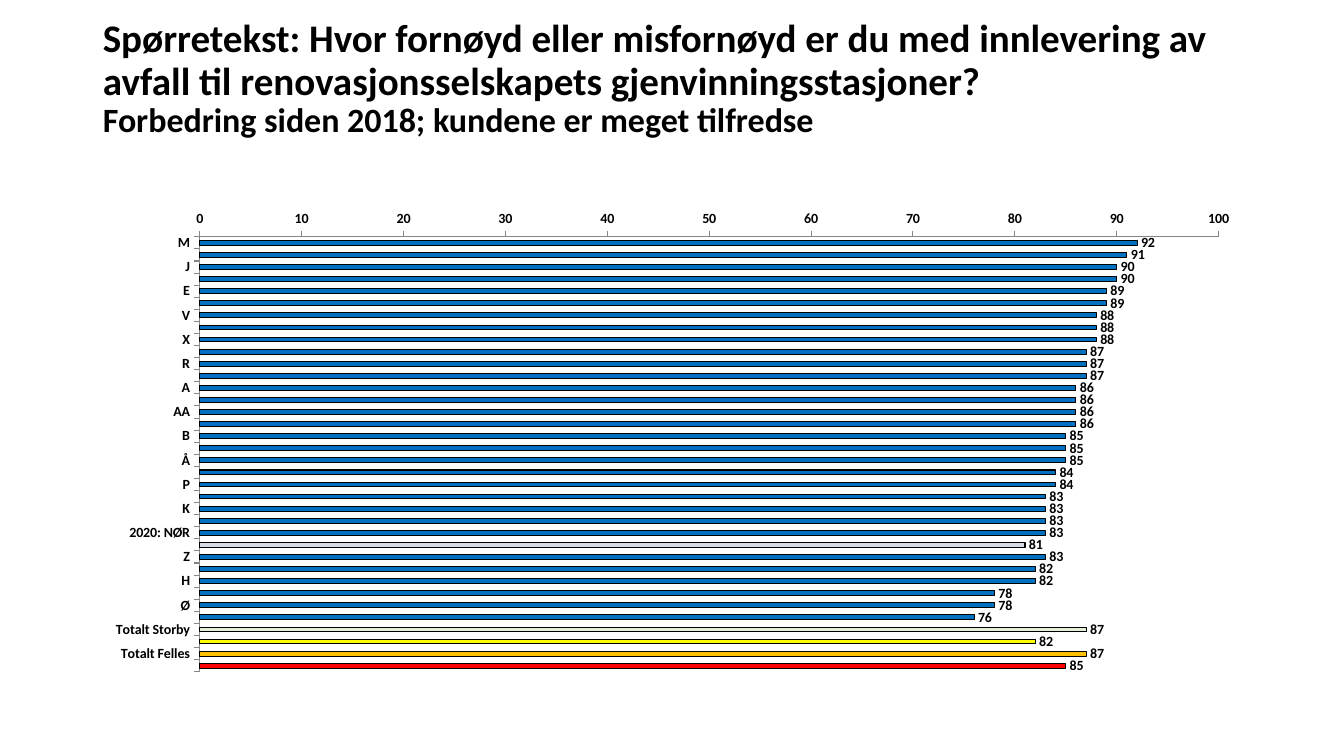
import copy

from lxml import etree
from pptx import Presentation
from pptx import util as u
from pptx.chart import data as cd
from pptx.dml.color import RGBColor
from pptx.enum import chart as ch, text as tx
from pptx.oxml import ns

BLACK = RGBColor(0, 0, 0)
GREY = RGBColor(0x86, 0x86, 0x86)
BLUE = RGBColor(0x00, 0x70, 0xC0)
PALE = RGBColor(0xD6, 0xDC, 0xE5)
GREEN = RGBColor(0xE2, 0xF0, 0xD9)
YELLOW = RGBColor(0xFF, 0xFF, 0x00)
ORANGE = RGBColor(0xFF, 0xC0, 0x00)
RED = RGBColor(0xFF, 0x00, 0x00)

# Score and highlight colour of each bar
NAMES = ("M I J U E S V W X L R T A Q AA AB B D Å G P C K N").split()
NAMES += ["2020: NØR", "2018: NØR", "Z", "F", "H", "Æ", "Ø", "Y",
          "Totalt Storby", "Totalt Innsikt", "Totalt Felles", "Totalt Alle20"]
SCORES = [92, 91, 90, 90, 89, 89, 88, 88, 88, 87, 87, 87, 86, 86, 86, 86, 85, 85,
          85, 84, 84, 83, 83, 83, 83, 81, 83, 82, 82, 78, 78, 76, 87, 82, 87, 85]
MARKS = {25: PALE, 32: GREEN, 33: YELLOW, 34: ORANGE, 35: RED}


def style(font, size=10, color=BLACK, bold=True):
    font.name = "Calibri"
    font.size = u.Pt(size)
    font.bold = bold
    font.color.rgb = color


def write(para, words, **form):
    """Add one run and a line break of the same size."""
    run = para.add_run()
    run.text = words
    style(run.font, **form)
    para.add_line_break()
    para._p[-1].append(copy.deepcopy(run._r.rPr))


def head(slide):
    box = slide.shapes.title
    box.left, box.top = u.Inches(0.92), u.Inches(0.4)
    box.width, box.height = u.Inches(11.5), u.Inches(1.45)
    frame = box.text_frame
    frame.word_wrap = True
    frame.auto_size = tx.MSO_AUTO_SIZE.NONE
    frame.vertical_anchor = tx.MSO_ANCHOR.MIDDLE
    para = frame.paragraphs[0]
    para.alignment = tx.PP_ALIGN.LEFT
    para.line_spacing = 0.9
    write(para, "Spørretekst: Hvor fornøyd eller misfornøyd er du med innlevering av "
                "avfall til renovasjonsselskapets gjenvinningsstasjoner?", size=27.9)
    write(para, "Forbedring siden 2018; kundene er meget tilfredse", size=24.3)
    # Height of the closing line
    etree.SubElement(para._p, ns.qn("a:endParaRPr"), sz="4000")


def paint(shape, color):
    shape.fill.solid()
    shape.fill.fore_color.rgb = color
    shape.line.color.rgb = BLACK
    shape.line.width = u.Pt(0.75)


def trim(axis):
    axis.has_major_gridlines = False
    axis.major_tick_mark = ch.XL_TICK_MARK.OUTSIDE
    axis.format.line.color.rgb = GREY
    axis.format.line.width = u.Pt(0.75)
    style(axis.tick_labels.font)


def bars(slide):
    data = cd.CategoryChartData()
    data.categories = NAMES
    data.add_series("Series 1", SCORES)
    chart = slide.shapes.add_chart(
        ch.XL_CHART_TYPE.BAR_CLUSTERED, u.Inches(0.92), u.Inches(2),
        u.Inches(11.5), u.Inches(4.76), data).chart
    chart.has_legend = False
    chart.has_title = False
    style(chart.font)

    # Axes: first name on top, scale above the bars
    trim(chart.category_axis)
    trim(chart.value_axis)
    chart.category_axis.reverse_order = True
    chart.value_axis.minimum_scale = 0
    chart.value_axis.maximum_scale = 100
    chart.value_axis.major_unit = 10

    # Bars and their values
    plot = chart.plots[0]
    plot.gap_width = 150
    plot.vary_by_categories = False
    plot.has_data_labels = True
    tags = plot.data_labels
    tags.show_value = True
    tags.position = ch.XL_LABEL_POSITION.OUTSIDE_END
    style(tags.font)
    row = plot.series[0]
    row.invert_if_negative = False
    paint(row.format, BLUE)
    for spot, color in MARKS.items():
        paint(row.points[spot].format, color)


def main():
    deck = Presentation()
    deck.slide_width, deck.slide_height = u.Inches(13.33), u.Inches(7.5)
    slide = deck.slides.add_slide(deck.slide_layouts[5])
    head(slide)
    bars(slide)
    deck.save("out.pptx")


if __name__ == "__main__":
    main()
